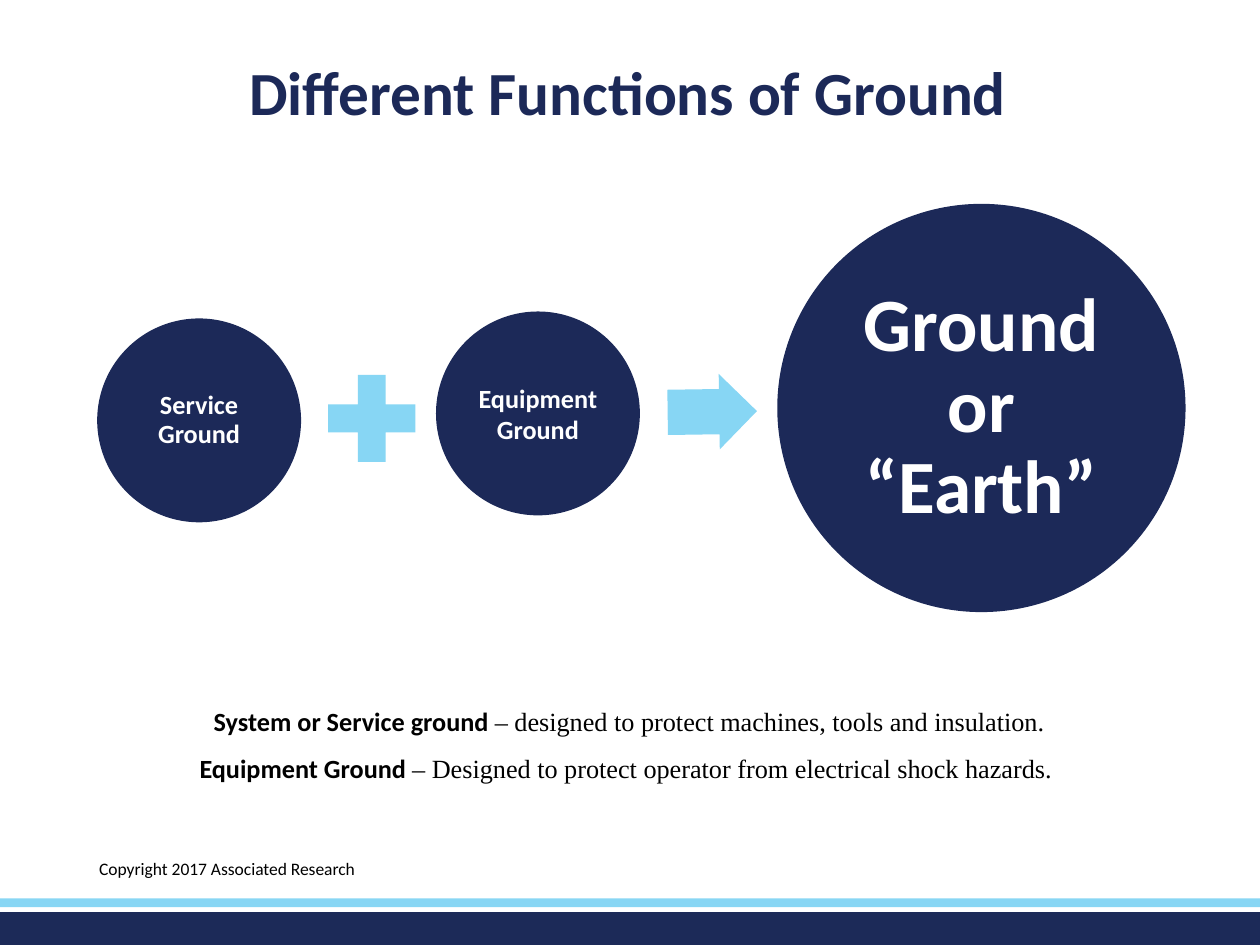
from pptx import Presentation
from pptx import util as u
from pptx.dml.color import RGBColor
from pptx.enum import shapes, text

NAVY, SKY = "1C2958", "87D6F4"
FOOTER_NAVY, FOOTER_SKY = "1C2A58", "88D6F4"
BLACK, WHITE = "000000", "FFFFFF"
SHAPE = shapes.MSO_SHAPE
CENTER = text.PP_ALIGN.CENTER
MIDDLE = text.MSO_ANCHOR.MIDDLE


def rgb(value):
    return RGBColor.from_string(value)


def add_figure(slide, kind, box, fill):
    """Add a preset shape with a flat fill and neither line nor shadow."""
    figure = slide.shapes.add_shape(kind, *map(u.Cm, box))
    figure.shadow.inherit = False
    figure.fill.solid()
    figure.fill.fore_color.rgb = rgb(fill)
    figure.line.fill.background()
    return figure


def write_paragraph(paragraph, runs, size, color, align=None, spacing=None):
    """Fill a paragraph from (words, font name, bold) runs."""
    layout = {"alignment": align, "line_spacing": spacing}
    for key, value in layout.items():
        setattr(paragraph, key, value)
    for words, name, bold in runs:
        run = paragraph.add_run()
        run.text = words
        look = {"name": name, "size": u.Pt(size), "bold": bold}
        for key, value in look.items():
            setattr(run.font, key, value)
        run.font.color.rgb = rgb(color)


def add_text(slide, box, lines, size, color, align=None, spacing=None, anchor=None):
    frame = slide.shapes.add_textbox(*map(u.Cm, box)).text_frame
    frame.word_wrap = True
    frame.vertical_anchor = anchor
    for index, runs in enumerate(lines):
        paragraph = frame.add_paragraph() if index else frame.paragraphs[0]
        write_paragraph(paragraph, runs, size, color, align, spacing)


def add_circle(slide, left, top, diameter, label, size, inset, spacing):
    circle = add_figure(slide, SHAPE.OVAL, (left, top, diameter, diameter), NAVY)
    frame = circle.text_frame
    frame.word_wrap = True
    frame.vertical_anchor = MIDDLE
    for side in ("left", "top", "right", "bottom"):
        setattr(frame, f"margin_{side}", u.Cm(inset))
    write_paragraph(frame.paragraphs[0], [(label, "Calibri", True)],
                    size, WHITE, CENTER, spacing)


def add_footer(slide):
    add_figure(slide, SHAPE.RECTANGLE, (0, 18.39, 25.4, 0.66), FOOTER_NAVY)
    add_figure(slide, SHAPE.RECTANGLE, (0, 18.11, 25.4, 0.18), FOOTER_SKY)
    notice = [("Copyright 2017 Associated Research", "Calibri", False)]
    add_text(slide, (1.75, 17.17, 6.73, 1.02), [notice], 10, BLACK)


def add_equation(slide):
    """Service ground plus equipment ground leads to earth."""
    add_circle(slide, 1.96, 6.42, 4.11, "Service Ground", 15, 0.05, 0.9)
    add_figure(slide, SHAPE.MATH_PLUS, (6.3, 7.24, 2.39, 2.39), SKY)
    add_circle(slide, 8.79, 6.28, 4.11, "Equipment Ground", 15, 0.05, 1.0)
    arrow = add_figure(slide, SHAPE.RIGHT_ARROW, (13.46, 7.54, 1.8, 1.52), SKY)
    arrow.adjustments[0] = 0.6
    arrow.rotation = -0.8
    add_circle(slide, 15.67, 4.11, 8.23, "Ground or “Earth”", 43, 0.15, 0.9)


def add_definitions(slide):
    definitions = [
        ("System or Service ground ",
         "– designed to protect machines, tools and insulation."),
        ("Equipment Ground ",
         "– Designed to protect operator from electrical shock hazards. "),
    ]
    lines = [[(term, "Calibri", True), (meaning, "Times New Roman", False)]
             for term, meaning in definitions]
    add_text(slide, (0.84, 13.77, 23.7, 2.18), lines, 15, BLACK, CENTER, 1.5)


def main():
    deck = Presentation()
    deck.slide_width, deck.slide_height = u.Cm(25.4), u.Cm(19.05)
    slide = deck.slides.add_slide(deck.slide_layouts[6])
    add_footer(slide)
    add_definitions(slide)
    add_equation(slide)
    title = [("Different Functions of Ground", "Calibri", True)]
    add_text(slide, (2.08, 1.19, 21.16, 1.47), [title], 35, NAVY,
             CENTER, 0.9, MIDDLE)
    deck.save("out.pptx")


if __name__ == "__main__":
    main()
